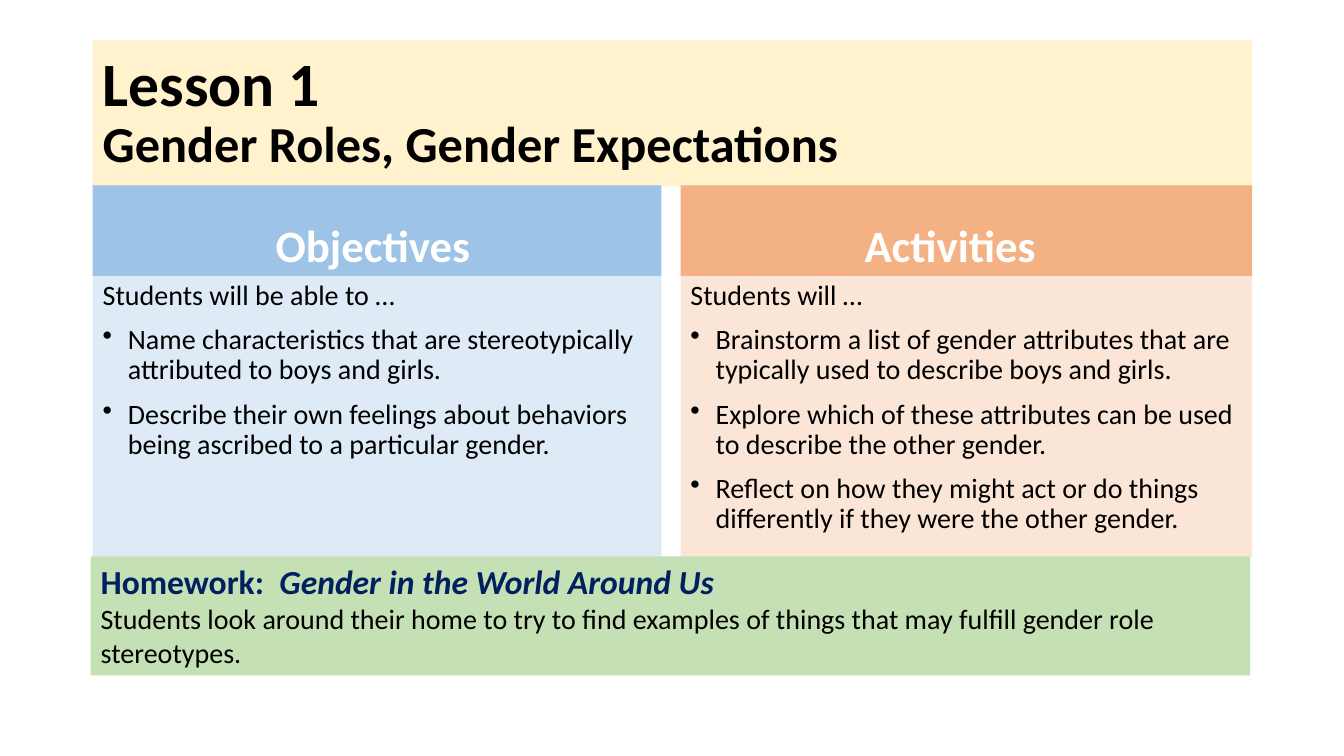
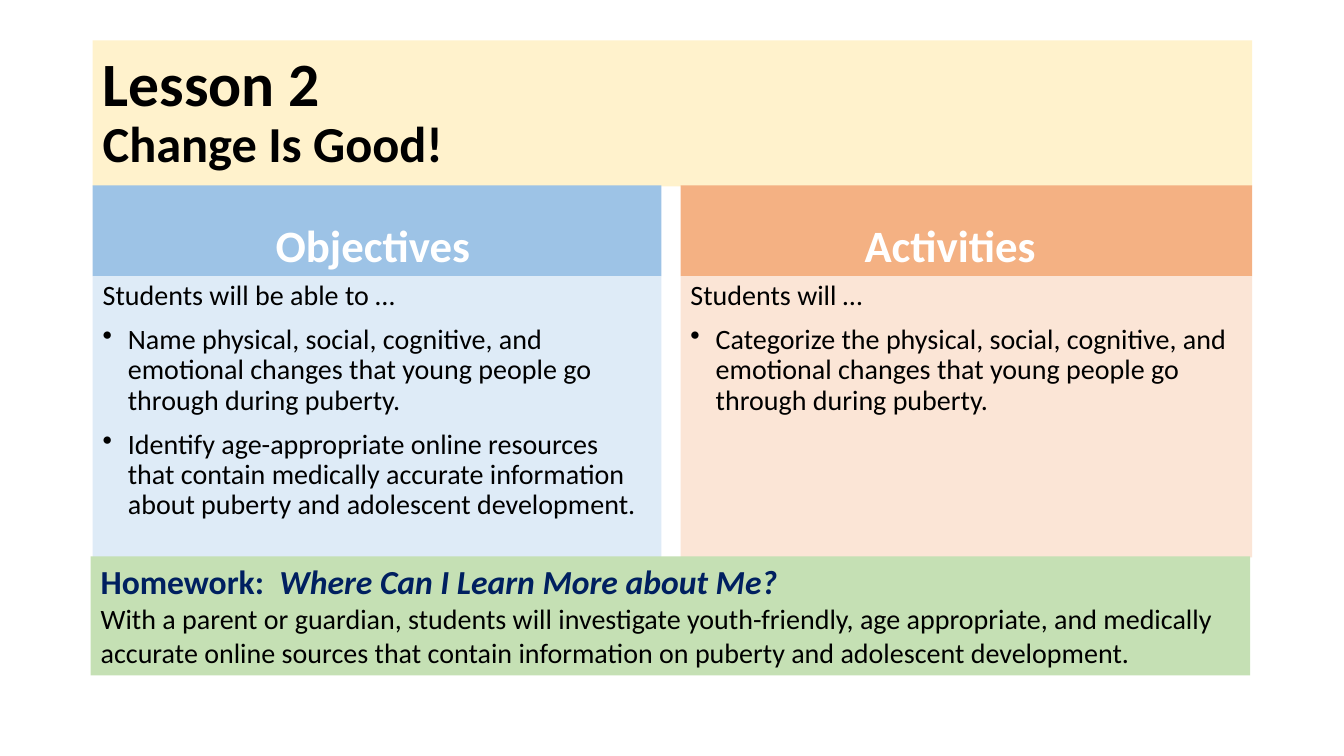
from pptx import Presentation
from pptx.dml.color import RGBColor
from pptx.enum.text import MSO_ANCHOR, PP_ALIGN
from pptx.util import Inches, Pt
from lxml import etree

TOP, MIDDLE, BOTTOM = MSO_ANCHOR.TOP, MSO_ANCHOR.MIDDLE, MSO_ANCHOR.BOTTOM
CENTER = PP_ALIGN.CENTER

FONT = "Calibri"
COLORS = {
    "title_band": "FFF2CC",
    "objectives_head": "9DC3E6",
    "objectives_body": "DEEBF7",
    "activities_head": "F4B183",
    "activities_body": "FBE5D6",
    "homework_band": "C5E0B4",
    "homework_title": "002060",
    "text": "000000",
    "head_text": "FFFFFF",
}

# Shared layout, in inches
LEFT, WIDTH = 0.92, 11.5
TITLE_TOP, TITLE_HEIGHT = 0.4, 1.45
HEAD_TOP, HEAD_HEIGHT = 1.84, 0.9
BODY_TOP, BODY_HEIGHT = HEAD_TOP + HEAD_HEIGHT, 2.79
HOMEWORK_LEFT, HOMEWORK_TOP, HOMEWORK_HEIGHT = 0.9, 5.52, 1.18
BULLET_INDENT = 0.25

# Heading, lead-in, colour key, left, width, right inset of the heading
COLUMNS = [
    ("Objectives", "Students will be able to …", "objectives", LEFT, 5.64, 0.18),
    ("Activities", "Students will …", "activities", 6.75, 5.67, 0.42),
]

LESSONS = [
    {
        "number": "Lesson 1",
        "topic": "Gender Roles, Gender Expectations",
        "objectives": [
            "Name characteristics that are stereotypically attributed to boys and girls.",
            "Describe their own feelings about behaviors being ascribed to a particular gender.",
        ],
        "activities": [
            "Brainstorm a list of gender attributes that are typically used to describe boys and girls.",
            "Explore which of these attributes can be used to describe the other gender.",
            "Reflect on how they might act or do things differently if they were the other gender.",
        ],
        "homework": "Gender in the World Around Us",
        "task": "Students look around their home to try to find examples of things "
                "that may fulfill gender role stereotypes.",
    },
    {
        "number": "Lesson 2",
        "topic": "Change Is Good!",
        "objectives": [
            "Name physical, social, cognitive, and emotional changes that young people "
            "go through during puberty.",
            "Identify age-appropriate online resources that contain medically accurate "
            "information about puberty and adolescent development.",
        ],
        "activities": [
            "Categorize the physical, social, cognitive, and emotional changes that "
            "young people go through during puberty.",
        ],
        "homework": "Where Can I Learn More about Me?",
        "task": "With a parent or guardian, students will investigate youth-friendly, "
                "age appropriate, and medically accurate online sources that contain "
                "information on puberty and adolescent development.",
    },
]


def add_band(slide, left, top, width, height, color, anchor=TOP):
    """Add a filled text band and return its text frame."""
    band = slide.shapes.add_textbox(
        Inches(left), Inches(top), Inches(width), Inches(height))
    band.fill.solid()
    band.fill.fore_color.rgb = RGBColor.from_string(COLORS[color])
    frame = band.text_frame
    frame.word_wrap = True
    frame.vertical_anchor = anchor
    return frame


def style(paragraph, size, color="text", bold=False):
    font = paragraph.font
    font.name, font.size, font.bold = FONT, Pt(size), bold
    font.color.rgb = RGBColor.from_string(COLORS[color])


def add_run(paragraph, text):
    run = paragraph.add_run()
    run.text = text
    return run


def set_bullet(paragraph):
    properties = paragraph._p.get_or_add_pPr()
    indent = Inches(BULLET_INDENT)
    properties.set("marL", str(indent))
    properties.set("indent", str(-indent))
    namespace = etree.QName(properties).namespace
    bullet = etree.Element(f"{{{namespace}}}buChar", char="•")
    # Bullets come before the default run properties
    properties.find(f"{{{namespace}}}defRPr").addprevious(bullet)


def add_title(slide, number, topic):
    title = add_band(slide, LEFT, TITLE_TOP, WIDTH, TITLE_HEIGHT,
                     "title_band", MIDDLE).paragraphs[0]
    style(title, 44, bold=True)
    title.line_spacing = 0.9
    add_run(title, number)
    title.add_line_break()
    add_run(title, topic).font.size = Pt(36)


def add_column(slide, heading, lead, key, left, width, right_inset, points):
    # Heading
    head = add_band(slide, left, HEAD_TOP, width, HEAD_HEIGHT, f"{key}_head", BOTTOM)
    head.margin_right = Inches(right_inset)
    label = head.paragraphs[0]
    label.text = heading
    label.alignment = CENTER
    style(label, 32, "head_text", bold=True)

    # Lead-in and bullet points
    body = add_band(slide, left, BODY_TOP, width, BODY_HEIGHT, f"{key}_body")
    for index, text in enumerate([lead, *points]):
        line = body.add_paragraph() if index else body.paragraphs[0]
        line.text = text
        line.line_spacing = 0.9
        line.space_before = Pt(10)
        style(line, 20)
        if index:
            set_bullet(line)


def add_homework(slide, name, task):
    frame = add_band(slide, HOMEWORK_LEFT, HOMEWORK_TOP, WIDTH,
                     HOMEWORK_HEIGHT, "homework_band")
    title = frame.paragraphs[0]
    style(title, 24, "homework_title", bold=True)
    add_run(title, "Homework:  ")
    add_run(title, name).font.italic = True
    details = frame.add_paragraph()
    details.text = task
    style(details, 20)


def main():
    presentation = Presentation()
    presentation.slide_width = Inches(13.33)
    presentation.slide_height = Inches(7.5)
    blank = presentation.slide_layouts[6]
    for lesson in LESSONS:
        slide = presentation.slides.add_slide(blank)
        add_title(slide, lesson["number"], lesson["topic"])
        for column in COLUMNS:
            add_column(slide, *column, lesson[column[2]])
        add_homework(slide, lesson["homework"], lesson["task"])
    presentation.save("out.pptx")


if __name__ == "__main__":
    main()
